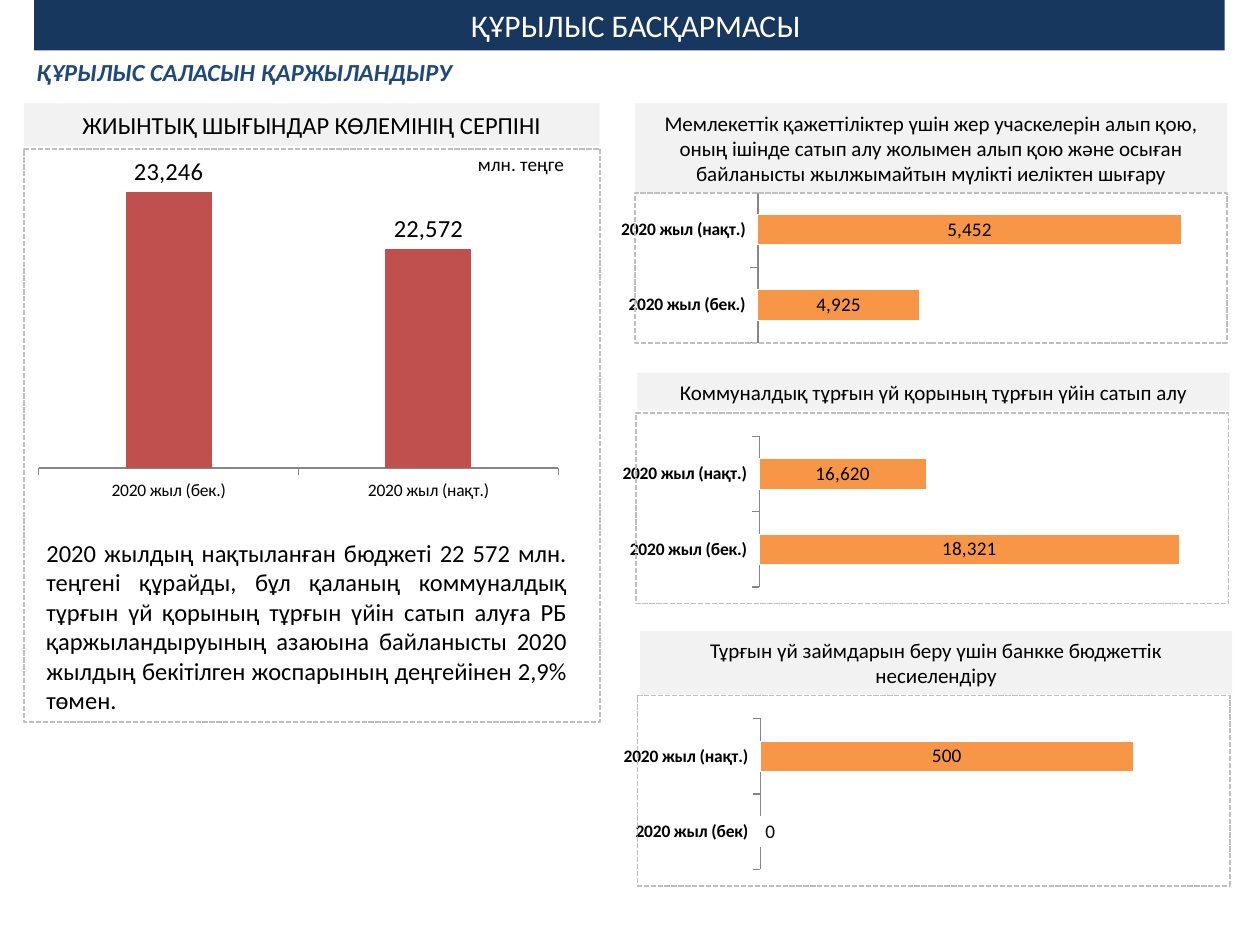
from lxml import etree
from pptx import Presentation
from pptx.chart.data import CategoryChartData
from pptx.dml.color import RGBColor
from pptx.enum.chart import XL_CHART_TYPE, XL_LABEL_POSITION, XL_TICK_MARK
from pptx.enum.dml import MSO_LINE
from pptx.enum.shapes import MSO_SHAPE
from pptx.enum.text import MSO_ANCHOR, PP_ALIGN
from pptx.oxml.ns import qn
from pptx.util import Inches, Pt

FONT = "Calibri"


def color(value):
    return RGBColor.from_string(value)


def set_font(font, size, value="000000", bold=False, italic=False):
    font.name = FONT
    font.size = Pt(size)
    font.color.rgb = color(value)
    font.bold = bold
    font.italic = italic


def write_text(shape, text, size, value="000000", align=PP_ALIGN.LEFT,
               anchor=MSO_ANCHOR.TOP, bold=False, italic=False):
    frame = shape.text_frame
    frame.word_wrap = True
    frame.vertical_anchor = anchor
    frame.margin_left = frame.margin_right = Inches(0.1)
    frame.margin_top = frame.margin_bottom = Inches(0.05)
    paragraph = frame.paragraphs[0]
    paragraph.alignment = align
    run = paragraph.add_run()
    run.text = text
    set_font(run.font, size, value, bold, italic)


def add_text(slide, box, text, size, **style):
    shape = slide.shapes.add_textbox(*map(Inches, box))
    write_text(shape, text, size, **style)


def add_band(slide, box, fill):
    shape = slide.shapes.add_shape(MSO_SHAPE.RECTANGLE, *map(Inches, box))
    shape.shadow.inherit = False
    shape.fill.solid()
    shape.fill.fore_color.rgb = color(fill)
    shape.line.fill.background()
    return shape


def add_heading(slide, box, text, size):
    write_text(add_band(slide, box, "F2F2F2"), text, size,
               align=PP_ALIGN.CENTER, anchor=MSO_ANCHOR.MIDDLE)


def add_frame(slide, box):
    shape = slide.shapes.add_shape(MSO_SHAPE.RECTANGLE, *map(Inches, box))
    shape.shadow.inherit = False
    shape.fill.background()
    shape.line.color.rgb = color("BFBFBF")
    shape.line.width = Pt(1)
    shape.line.dash_style = MSO_LINE.SQUARE_DOT


def set_plot_area(chart, area):
    plot_area = chart._chartSpace.chart.plotArea
    for old in plot_area.findall(qn("c:layout")):
        plot_area.remove(old)
    layout = etree.Element(qn("c:layout"))
    manual = etree.SubElement(layout, qn("c:manualLayout"))
    settings = [("layoutTarget", "inner"), ("xMode", "edge"), ("yMode", "edge")]
    settings += zip("xywh", area)
    for name, value in settings:
        etree.SubElement(manual, qn(f"c:{name}")).set("val", str(value))
    plot_area.insert(0, layout)


def add_chart(slide, kind, box, categories, values, limits, fill, area,
              gap, overlap, label_size, label_position, bold):
    data = CategoryChartData(number_format="#,##0")
    data.categories = categories
    data.add_series("Series 1", values)
    chart = slide.shapes.add_chart(kind, *map(Inches, box), data).chart
    chart.has_legend = False
    chart.has_title = False
    set_font(chart.font, 18)
    set_plot_area(chart, area)

    value_axis = chart.value_axis
    value_axis.minimum_scale, value_axis.maximum_scale = limits
    value_axis.has_major_gridlines = False
    value_axis.visible = False
    category_axis = chart.category_axis
    category_axis.major_tick_mark = XL_TICK_MARK.OUTSIDE
    category_axis.format.line.color.rgb = color("868686")
    set_font(category_axis.tick_labels.font, 10, bold=bold)

    plot = chart.plots[0]
    plot.vary_by_categories = False
    plot.gap_width = gap
    plot.overlap = overlap
    series = plot.series[0]
    series.format.fill.solid()
    series.format.fill.fore_color.rgb = color(fill)
    labels = series.data_labels
    labels.show_value = True
    labels.number_format = "#,##0"
    labels.number_format_is_linked = False
    labels.position = label_position
    set_font(labels.font, label_size)
    return series


def add_header(slide, box):
    left, top, width, height = box
    title = slide.shapes.title
    title.left, title.top = Inches(left - 0.18), Inches(top)
    title.width, title.height = Inches(width + 0.46), Inches(height)
    write_text(title, "ҚҰРЫЛЫС БАСҚАРМАСЫ", 18, "FFFFFF",
               PP_ALIGN.CENTER, MSO_ANCHOR.MIDDLE)
    band = add_band(slide, box, "17375E")
    title._element.addprevious(band._element)
    add_text(slide, (left - 0.08, top + height, width + 0.36, 0.34),
             "ҚҰРЫЛЫС САЛАСЫН ҚАРЖЫЛАНДЫРУ", 14,
             value="1F497D", bold=True, italic=True)


def add_summary(slide, box):
    left, top, width, height = box
    add_chart(slide, XL_CHART_TYPE.COLUMN_CLUSTERED,
              (left, top + 0.02, 4.36, 3.54),
              ("2020 жыл (бек.)", "2020 жыл (нақт.)"), (23246, 22572),
              (20000, 23500), "C0504D", (0.027, 0.144, 0.946, 0.668),
              202, -56, 14, XL_LABEL_POSITION.OUTSIDE_END, False)
    add_heading(slide, (left, top, width, 0.34),
                "ЖИЫНТЫҚ ШЫҒЫНДАР КӨЛЕМІНІҢ СЕРПІНІ", 14)
    add_text(slide, (left + 3.47, top + 0.34, 0.95, 0.29), "млн. теңге", 11,
             align=PP_ALIGN.CENTER)
    add_text(slide, (left + 0.08, top + 3.4, 4.33, 1.52),
             "2020 жылдың нақтыланған бюджеті 22 572 млн. теңгені құрайды, "
             "бұл қаланың коммуналдық тұрғын үй қорының тұрғын үйін сатып "
             "алуға РБ қаржыландыруының азаюына байланысты 2020 жылдың "
             "бекітілген жоспарының деңгейінен 2,9% төмен.", 14,
             align=PP_ALIGN.JUSTIFY)
    add_frame(slide, (left, top + 0.36, width, height - 0.36))


def add_program(slide, heading_box, frame_box, chart_shift, heading,
                categories, values, limits):
    left, top = frame_box[:2]
    series = add_chart(slide, XL_CHART_TYPE.BAR_STACKED,
                       (left - 0.11, top + chart_shift, 4.9, 1.7),
                       categories, values, limits, "F79646",
                       (0.219, 0.078, 0.727, 0.705),
                       150, 100, 11, XL_LABEL_POSITION.CENTER, True)
    series.format.line.color.rgb = color("FFFFFF")
    for index, value in enumerate(values):
        if value == 0:
            label = series.points[index].data_label
            set_font(label.font, 11)
            label.position = XL_LABEL_POSITION.INSIDE_BASE
    add_heading(slide, heading_box, heading, 12)
    add_frame(slide, frame_box)


def main():
    presentation = Presentation()
    presentation.slide_width = Inches(10)
    presentation.slide_height = Inches(7.5)
    slide = presentation.slides.add_slide(presentation.slide_layouts[5])
    add_header(slide, (0.27, 0, 9.45, 0.4))
    add_summary(slide, (0.19, 0.82, 4.57, 4.91))
    years = ("2020 жыл (бек.)", "2020 жыл (нақт.)")
    programs = [
        ((5.04, 0.82, 4.7, 0.71), (5.04, 1.53, 4.7, 1.19), -0.14,
         "Мемлекеттік қажеттіліктер үшін жер учаскелерін алып қою, оның "
         "ішінде сатып алу жолымен алып қою және осыған байланысты "
         "жылжымайтын мүлікті иеліктен шығару",
         years, (4925, 5452), (4600, 5500)),
        ((5.06, 2.96, 4.7, 0.3), (5.05, 3.28, 4.7, 1.51), 0.05,
         "Коммуналдық тұрғын үй қорының тұрғын үйін сатып алу",
         years, (18321, 16620), (15500, 18500)),
        ((5.08, 5.01, 4.7, 0.5), (5.06, 5.52, 4.7, 1.51), 0.05,
         "Тұрғын үй займдарын беру үшін банкке бюджеттік несиелендіру",
         ("2020 жыл (бек)", "2020 жыл (нақт.)"), (0, 500), (0, 600)),
    ]
    for program in programs:
        add_program(slide, *program)
    presentation.save("out.pptx")


if __name__ == "__main__":
    main()
